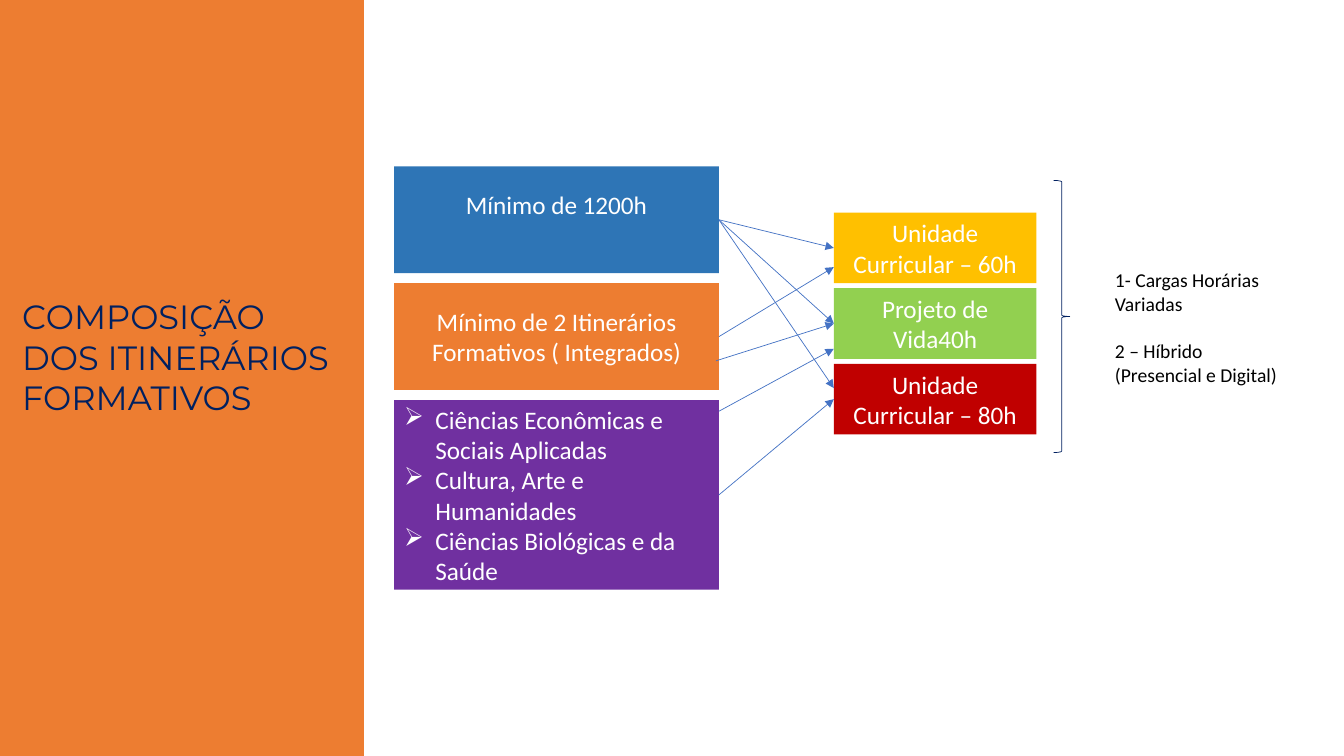
"""Builds the slide on how the training itineraries are composed."""
import lxml.etree
import pptx
import pptx.dml.color
import pptx.enum.shapes
import pptx.enum.text
import pptx.oxml.ns
import pptx.util

inch = pptx.util.Inches
qn = pptx.oxml.ns.qn
kinds = pptx.enum.shapes.MSO_SHAPE
align = pptx.enum.text.PP_ALIGN
anchor = pptx.enum.text.MSO_ANCHOR

theme = {
    "orange": "ED7D31", "blue": "2E75B6", "purple": "7030A0",
    "gold": "FFC000", "green": "92D050", "red": "C00000",
    "navy": "002060", "arrow": "4472C4", "white": "FFFFFF", "black": "000000",
    "head": {"name": "Montserrat", "size": pptx.util.Pt(24)},
    "body": {"name": "Calibri", "size": pptx.util.Pt(18)},
    "note": {"name": "Calibri", "size": pptx.util.Pt(14)},
    "thin": pptx.util.Pt(0.5),
}


def tint(name):
    return pptx.dml.color.RGBColor.from_string(theme[name])


def write(shape, lines, style, color, side, place):
    frame = shape.text_frame
    frame.text = "\n".join(lines)
    setup = {"word_wrap": True, "vertical_anchor": place,
             "auto_size": pptx.enum.text.MSO_AUTO_SIZE.NONE}
    for key, value in setup.items():
        setattr(frame, key, value)
    for para in frame.paragraphs:
        para.alignment = side
        para.line_spacing = 1.0
        for run in para.runs:
            run.font.color.rgb = tint(color)
            for key, value in theme[style].items():
                setattr(run.font, key, value)


deck = pptx.Presentation()
deck.slide_width, deck.slide_height = inch(13.33), inch(7.5)
slide = deck.slides.add_slide(deck.slide_layouts[5])
shapes = slide.shapes

title = shapes.title
spot = {"left": 0.12, "top": 2.89, "width": 3.3, "height": 1.72}
for key, value in spot.items():
    setattr(title, key, inch(value))
write(title, ["COMPOSIÇÃO DOS ITINERÁRIOS FORMATIVOS"], "head", "navy",
      align.LEFT, anchor.TOP)

panel = shapes.add_shape(kinds.RECTANGLE, 0, 0, inch(3.61), deck.slide_height)
panel.shadow.inherit = False
panel.fill.solid()
panel.fill.fore_color.rgb = tint("orange")
panel.line.fill.background()
title.element.addprevious(panel.element)

areas = ["Ciências Econômicas e Sociais Aplicadas",
         "Cultura, Arte e Humanidades",
         "Ciências Biológicas e da Saúde"]
columns = [
    (3.91, 1.65, 3.22, 0.1, [
        ("blue", 1.06, ["Mínimo de 1200h"]),
        ("orange", 1.06, ["Mínimo de 2 Itinerários Formativos ( Integrados)"]),
        ("purple", 1.88, areas)]),
    (8.27, 2.11, 2.01, 0.05, [
        ("gold", 0.7, ["Unidade Curricular – 60h"]),
        ("green", 0.7, ["Projeto de Vida40h"]),
        ("red", 0.7, ["Unidade Curricular – 80h"])]),
]
grid = []
for left, top, width, gap, rows in columns:
    boxes = []
    for color, height, lines in rows:
        box = shapes.add_shape(kinds.RECTANGLE, inch(left), inch(top),
                               inch(width), inch(height))
        box.shadow.inherit = False
        box.fill.solid()
        box.fill.fore_color.rgb = tint(color)
        box.line.fill.background()
        write(box, lines, "body", "white", align.CENTER, anchor.MIDDLE)
        boxes.append(box)
        top += height + gap
    grid.append(boxes)
goals, units = grid

goals[0].text_frame.margin_bottom = inch(0.35)
for para in goals[2].text_frame.paragraphs:
    para.alignment = align.LEFT
    props = para._p.get_or_add_pPr()
    props.set("marL", str(inch(0.31)))
    props.set("indent", str(-inch(0.31)))
    lxml.etree.SubElement(props, qn("a:buChar")).set("char", "➢")

links = [
    (7.13, 2.18, 2.47, goals[0], units[0]),
    (7.13, 2.18, 3.22, goals[0], units[1]),
    (7.13, 3.34, 2.65, goals[1], None),
    (7.13, 4.08, 3.46, None, None),
    (7.13, 2.18, 3.85, goals[0], None),
    (7.13, 4.91, 3.98, goals[2], units[2]),
    (7.1, 3.58, 3.22, None, units[1]),
]
for left, start, stop, goal, unit in links:
    link = shapes.add_connector(pptx.enum.shapes.MSO_CONNECTOR.STRAIGHT,
                                inch(left), inch(start), inch(8.27), inch(stop))
    if goal:
        link.begin_connect(goal, 3)
    if unit:
        link.end_connect(unit, 1)
    link.line.color.rgb = tint("arrow")
    link.line.width = theme["thin"]
    props = link.element.spPr
    lxml.etree.SubElement(props.find(qn("a:ln")), qn("a:tailEnd")).set("type", "triangle")
    lxml.etree.SubElement(props, qn("a:effectLst"))

brace = shapes.add_shape(kinds.RIGHT_BRACE, inch(10.45), inch(1.79),
                         inch(0.16), inch(2.7))
brace.shadow.inherit = False
brace.fill.background()
brace.line.color.rgb = tint("navy")
brace.line.width = theme["thin"]

note = shapes.add_textbox(inch(10.96), inch(2.61), inch(1.96), inch(1.28))
write(note, ["1- Cargas Horárias Variadas", "2 – Híbrido\v(Presencial e Digital)"],
      "note", "black", align.LEFT, anchor.TOP)
note.text_frame.paragraphs[1].space_before = pptx.util.Pt(17)

deck.save("out.pptx")
